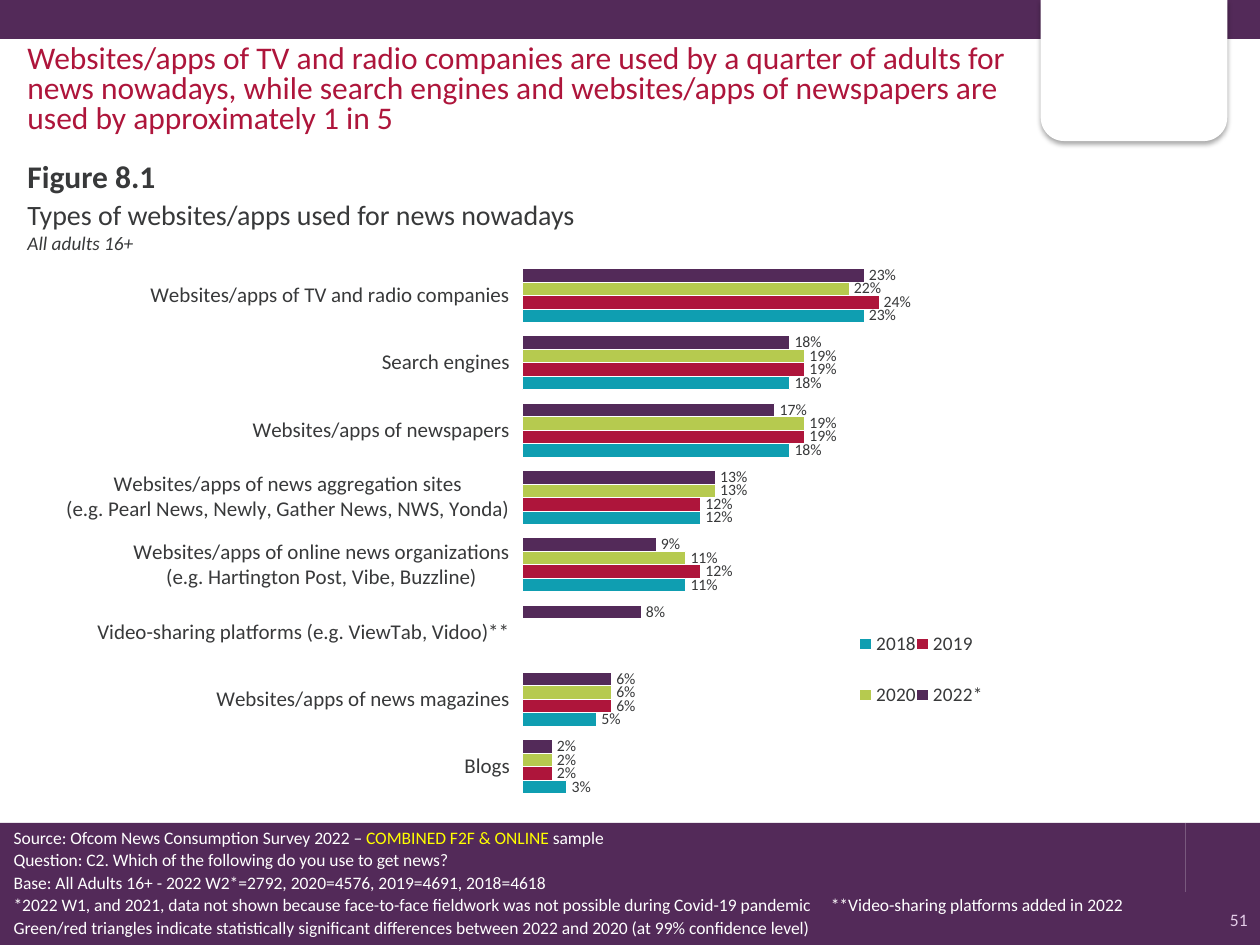
from dataclasses import dataclass

from lxml import etree
from pptx import Presentation
from pptx import util as u
from pptx.chart.data import CategoryChartData
from pptx.dml.color import RGBColor
from pptx.enum import chart as chart_enum, shapes, text
from pptx.oxml import parse_xml
from pptx.oxml.ns import nsdecls, qn


@dataclass(frozen=True)
class Theme:
    font: str = "Calibri"
    purple: str = "532A59"
    green: str = "B6CA4F"
    red: str = "AE153B"
    teal: str = "0F9EB1"
    ink: str = "38393A"
    white: str = "FFFFFF"
    yellow: str = "FFFF00"
    lilac: str = "E3CCE7"
    heading: int = 18
    title: int = 16
    category: int = 12
    small: int = 11
    note: int = 10
    value: int = 9


THEME = Theme()


@dataclass(frozen=True)
class Box:
    left: float
    top: float
    width: float
    height: float

    def lengths(self) -> list:
        return [u.Pt(n) for n in (self.left, self.top, self.width, self.height)]


@dataclass(frozen=True)
class Span:
    words: str
    size: int
    color: str = THEME.ink
    bold: bool = False
    italic: bool = False


@dataclass(frozen=True)
class Series:
    name: str
    color: str
    values: tuple


# Slide content
BANDS = [
    Box(0, 509.8, 720, 30.2),
    Box(677.5, 470.2, 42.5, 43.2),
    Box(0, 470.2, 677.5, 68.4),
    Box(0, 0, 720, 22.3),
]
HEADLINE = (
    "Websites/apps of TV and radio companies are used by a quarter of adults for "
    "news nowadays, while search engines and websites/apps of newspapers are "
    "used by approximately 1 in 5"
)
CATEGORIES = [
    "Websites/apps of TV and radio companies",
    "Search engines",
    "Websites/apps of newspapers",
    "Websites/apps of news aggregation sites\n"
    "(e.g. Pearl News, Newly, Gather News, NWS, Yonda)",
    "Websites/apps of online news organizations\n"
    "(e.g. Hartington Post, Vibe, Buzzline)",
    "Video-sharing platforms (e.g. ViewTab, Vidoo)**",
    "Websites/apps of news magazines",
    "Blogs",
]
SERIES = [
    Series("2022*", THEME.purple, (0.23, 0.18, 0.17, 0.13, 0.09, 0.08, 0.06, 0.02)),
    Series("2020", THEME.green, (0.22, 0.19, 0.19, 0.13, 0.11, None, 0.06, 0.02)),
    Series("2019", THEME.red, (0.24, 0.19, 0.19, 0.12, 0.12, None, 0.06, 0.02)),
    Series("2018", THEME.teal, (0.23, 0.18, 0.18, 0.12, 0.11, None, 0.05, 0.03)),
]
NOTES = [
    "Question: C2. Which of the following do you use to get news?",
    "Base: All Adults 16+ - 2022 W2*=2792, 2020=4576, 2019=4691, 2018=4618",
    "*2022 W1, and 2021, data not shown because face-to-face fieldwork was not possible "
    "during Covid-19 pandemic\t**Video-sharing platforms added in 2022",
    "Green/red triangles indicate statistically significant differences between 2022 "
    "and 2020 (at 99% confidence level)",
]


def set_font(font, size: int, color: str) -> None:
    font.name = THEME.font
    font.size = u.Pt(size)
    font.color.rgb = RGBColor.from_string(color)


def add_panel(slide, kind, box: Box, color: str):
    shape = slide.shapes.add_shape(kind, *box.lengths())
    shape.shadow.inherit = False
    shape.fill.solid()
    shape.fill.fore_color.rgb = RGBColor.from_string(color)
    shape.line.fill.background()
    return shape


def add_text(slide, box: Box, lines: list[list[Span]]):
    frame = slide.shapes.add_textbox(*box.lengths()).text_frame
    frame.word_wrap = True
    for index, spans in enumerate(lines):
        paragraph = frame.paragraphs[0] if index == 0 else frame.add_paragraph()
        for span in spans:
            run = paragraph.add_run()
            run.text = span.words
            set_font(run.font, span.size, span.color)
            run.font.bold = span.bold
            run.font.italic = span.italic
    return frame


def add_tab_stop(paragraph, position: float) -> None:
    tabs = etree.SubElement(paragraph._p.get_or_add_pPr(), qn("a:tabLst"))
    etree.SubElement(tabs, qn("a:tab"), pos=str(u.Pt(position)), algn="l")


def set_layout(owner, inner: bool, x: float, y: float, w: float, h: float) -> None:
    target = '<c:layoutTarget val="inner"/>' if inner else ""
    values = "".join(f'<c:{k} val="{v}"/>' for k, v in zip("xywh", (x, y, w, h)))
    layout = parse_xml(
        f'<c:layout {nsdecls("c")}><c:manualLayout>{target}<c:xMode val="edge"/>'
        f'<c:yMode val="edge"/>{values}</c:manualLayout></c:layout>'
    )
    for old in owner.findall(qn("c:layout")):
        owner.remove(old)
    owner.insert(0 if inner else 1, layout)


def add_usage_chart(slide, box: Box) -> None:
    data = CategoryChartData(number_format="0%")
    data.categories = CATEGORIES
    for item in SERIES:
        data.add_series(item.name, item.values)
    kind = chart_enum.XL_CHART_TYPE.BAR_CLUSTERED
    chart = slide.shapes.add_chart(kind, *box.lengths(), data).chart
    set_font(chart.font, THEME.note, THEME.ink)
    chart.has_title = False

    # Axes
    axis = chart.category_axis
    axis.reverse_order = True
    axis.format.line.fill.background()
    set_font(axis.tick_labels.font, THEME.category, THEME.ink)
    scale = chart.value_axis
    scale.minimum_scale, scale.maximum_scale = 0, 0.25
    scale.has_major_gridlines = False
    scale.visible = False

    # Bars and their values
    plot = chart.plots[0]
    plot.gap_width, plot.overlap = 100, 0
    plot.vary_by_categories = False
    for series, item in zip(plot.series, SERIES):
        series.format.fill.solid()
        series.format.fill.fore_color.rgb = RGBColor.from_string(item.color)
        series.format.line.color.rgb = RGBColor.from_string(THEME.white)
        series.format.line.width = u.Pt(0.25)
        labels = series.data_labels
        labels.show_value = True
        labels.number_format, labels.number_format_is_linked = "0%", False
        labels.position = chart_enum.XL_LABEL_POSITION.OUTSIDE_END
        set_font(labels.font, THEME.value, THEME.ink)

    # Legend and plot placement
    chart.has_legend = True
    legend = chart.legend
    legend.position = chart_enum.XL_LEGEND_POSITION.RIGHT
    legend.include_in_layout = False
    set_font(legend.font, THEME.small, THEME.ink)
    set_layout(legend._element, False, 0.86, 0.63, 0.13, 0.23)
    set_layout(chart._chartSpace.chart.plotArea, True, 0.506, 0.024, 0.39, 0.952)


def main() -> None:
    presentation = Presentation()
    presentation.slide_width, presentation.slide_height = u.Pt(720), u.Pt(540)
    slide = presentation.slides.add_slide(presentation.slide_layouts[6])

    # Bands and white tab
    for band in BANDS:
        add_panel(slide, shapes.MSO_SHAPE.RECTANGLE, band, THEME.purple)
    tab = add_panel(slide, shapes.MSO_SHAPE.ROUND_2_SAME_RECTANGLE,
                    Box(594.7, 0, 106.6, 80.6), THEME.white)
    tab.rotation = 180
    tab._element.spPr.find(qn("a:effectLst")).append(parse_xml(
        f'<a:outerShdw {nsdecls("a")} blurRad="{u.Pt(3.1)}" dist="{u.Pt(1.8)}" '
        'dir="5400000" rotWithShape="0"><a:srgbClr val="000000">'
        '<a:alpha val="35000"/></a:srgbClr></a:outerShdw>'))

    # Headline, figure number and title
    headline = add_text(slide, Box(8.6, 23, 594.8, 55.4),
                        [[Span(HEADLINE, THEME.heading, THEME.red)]])
    headline.paragraphs[0].line_spacing = u.Pt(17)
    add_text(slide, Box(8.6, 86.4, 700, 24),
             [[Span("Figure 8.1", THEME.heading, bold=True)]])
    add_text(slide, Box(8.6, 109.4, 700, 40),
             [[Span("Types of websites/apps used for news nowadays", THEME.title)],
              [Span("All adults 16+", THEME.small, italic=True)]])

    add_usage_chart(slide, Box(23, 141.8, 544.3, 323.3))

    # Footer notes and page number
    source = [Span("Source: Ofcom News Consumption Survey 2022 – ", THEME.note, THEME.white),
              Span("COMBINED F2F & ONLINE ", THEME.note, THEME.yellow),
              Span("sample", THEME.note, THEME.white)]
    notes = [[Span(note, THEME.note, THEME.white)] for note in NOTES]
    footer = add_text(slide, Box(0.7, 470.2, 712, 69.1), [source, *notes])
    for index, paragraph in enumerate(footer.paragraphs):
        paragraph.line_spacing = 0.9
        paragraph.space_before = u.Pt(2 if index else 0)
        if "\t" in paragraph.text:
            add_tab_stop(paragraph, 467)
    number = add_text(slide, Box(689, 515.5, 31, 20.2),
                      [[Span("51", THEME.note, THEME.lilac)]])
    number.vertical_anchor = text.MSO_ANCHOR.MIDDLE
    number.paragraphs[0].alignment = text.PP_ALIGN.RIGHT

    presentation.save("out.pptx")


if __name__ == "__main__":
    main()
